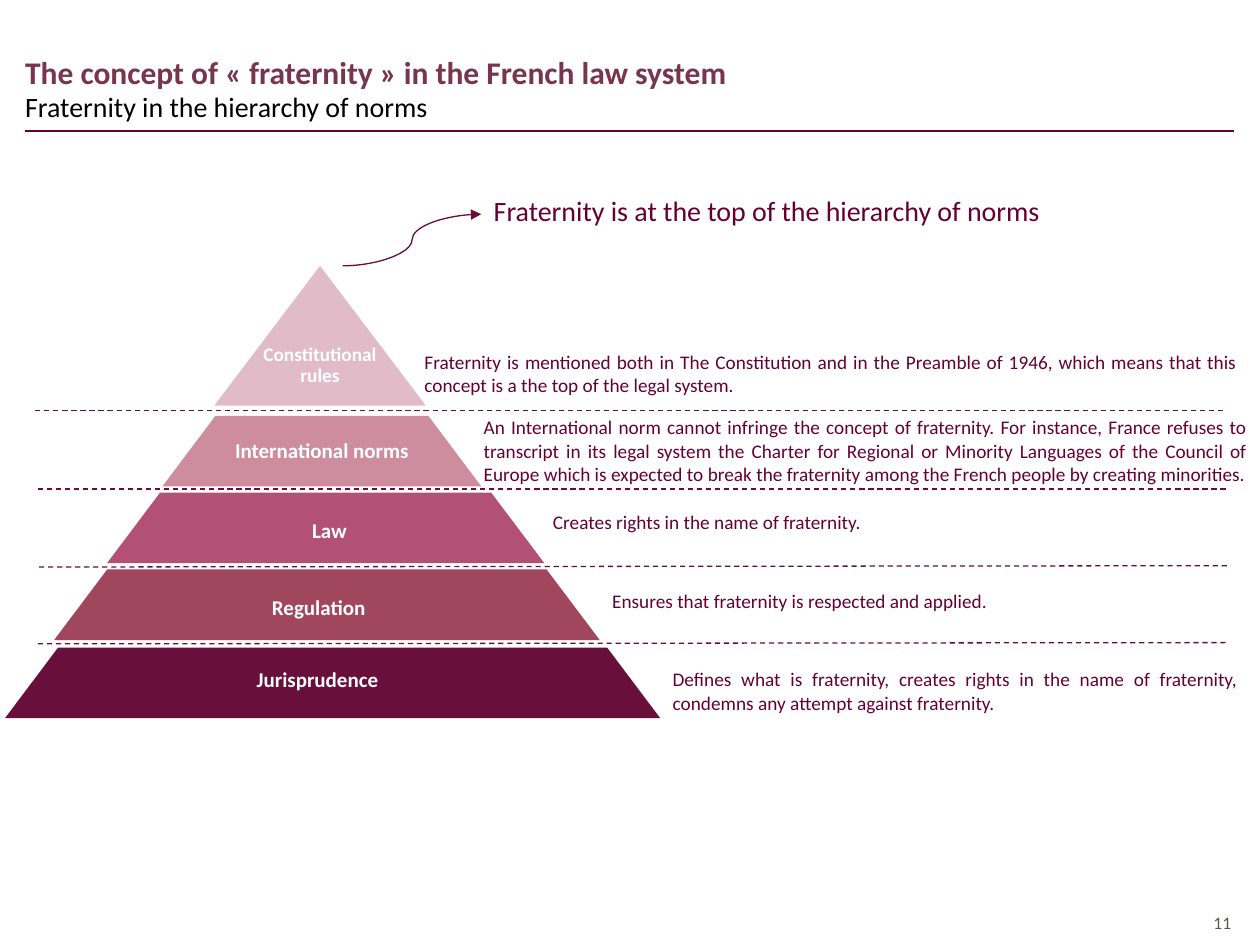
from lxml.etree import SubElement
from pptx import Presentation
from pptx.dml.color import RGBColor
from pptx.enum.dml import MSO_LINE
from pptx.enum.shapes import MSO_CONNECTOR as Connector, MSO_SHAPE as Shape
from pptx.enum.text import MSO_ANCHOR as Anchor, PP_ALIGN as Align
from pptx.oxml.ns import qn
from pptx.util import Inches, Pt

FONT = "Calibri"
WHITE = RGBColor(0xFF, 0xFF, 0xFF)
BLACK = RGBColor(0, 0, 0)
GREY = RGBColor(0x5C, 0x58, 0x51)
TITLE = RGBColor(0x78, 0x35, 0x4D)
PLUM = RGBColor(0x66, 0x00, 0x33)
LINE = RGBColor(0x69, 0x0C, 0x3B)
PINK = RGBColor(0xE1, 0xBB, 0xC8)
ROSE = RGBColor(0xCD, 0x8D, 0x9E)
MAUVE = RGBColor(0xB3, 0x51, 0x74)
BRICK = RGBColor(0xA0, 0x47, 0x5E)
WINE = RGBColor(0x69, 0x0F, 0x3C)

TIER_HEIGHT = 0.56
TIER_SLOPE = 0.752

# Tier box (left, top, width), colour, label, label box
TIERS = [
    ((1.29, 3.3, 2.53), ROSE, "International norms", (1.67, 3.42, 1.77, 0.3)),
    ((0.85, 3.91, 3.47), MAUVE, "Law", (1.7, 4.06, 1.83, 0.3)),
    ((0.43, 4.52, 4.33), BRICK, "Regulation", (1.66, 4.67, 1.74, 0.3)),
    ((0.04, 5.14, 5.2), WINE, "Jurisprudence", (1.65, 5.24, 1.74, 0.3)),
]

# Start and end of each dashed line
DIVIDERS = [
    (0.28, 3.26, 9.72, 3.26),
    (0.3, 3.88, 9.75, 3.88),
    (0.31, 4.5, 9.76, 4.49),
    (0.3, 5.11, 9.75, 5.1),
]

NOTES = [
    ((3.27, 2.73, 6.65, 0.47),
     "Fraternity is mentioned both in The Constitution and in the Preamble of "
     "1946, which means that this concept is a the top of the legal system."),
    ((3.74, 3.25, 6.26, 0.66),
     "An International norm cannot infringe the concept of fraternity. For "
     "instance, France refuses to transcript in its legal system the Charter for "
     "Regional or Minority Languages of the Council of Europe which is expected "
     "to break the fraternity among the French people by creating minorities."),
    ((4.29, 4, 6.18, 0.29), "Creates rights in the name of fraternity."),
    ((4.76, 4.63, 6.18, 0.29), "Ensures that fraternity is respected and applied."),
    ((5.24, 5.25, 4.68, 0.47),
     "Defines what is fraternity, creates rights in the name of fraternity, "
     "condemns any attempt against fraternity."),
]


def inches(box):
    return [Inches(length) for length in box]


def style(para, size, color, bold=False, align=Align.LEFT):
    para.alignment = align
    para.font.name = FONT
    para.font.size = Pt(size)
    para.font.color.rgb = color
    para.font.bold = bold


def add_text(page, box, text, size, color, bold=False, align=Align.LEFT, left=0.1, right=0.1):
    frame = page.shapes.add_textbox(*inches(box)).text_frame
    frame.word_wrap = True
    frame.margin_left, frame.margin_right = Inches(left), Inches(right)
    frame.text = text
    style(frame.paragraphs[0], size, color, bold, align)


def add_line(page, ends, color, width, kind=Connector.STRAIGHT):
    line = page.shapes.add_connector(kind, *inches(ends))
    line.line.color.rgb = color
    line.line.width = Pt(width)
    SubElement(line._element.spPr, qn("a:effectLst"))
    return line


def add_filled(page, kind, box, color):
    shape = page.shapes.add_shape(kind, *inches(box))
    shape.shadow.inherit = False
    shape.fill.solid()
    shape.fill.fore_color.rgb = color
    shape.line.fill.background()
    return shape


def add_header(page, left, top, width):
    add_text(page, (left, top, width, 0.32),
             "The concept of « fraternity » in the French law system",
             18, TITLE, bold=True, left=0)
    add_text(page, (left, top + 0.29, width, 0.36),
             "Fraternity in the hierarchy of norms", 16, BLACK, left=0)
    add_line(page, (left, top + 0.67, left + width - 0.01, top + 0.67), PLUM, 1)


def add_peak(page, box):
    frame = add_filled(page, Shape.ISOSCELES_TRIANGLE, box, PINK).text_frame
    frame.word_wrap = False
    frame.vertical_anchor = Anchor.TOP
    frame.margin_left = frame.margin_right = frame.margin_bottom = 0
    frame.margin_top = Inches(0.07)
    frame.text = "Constitutional\nrules"
    for para in frame.paragraphs:
        style(para, 11, WHITE, bold=True, align=Align.CENTER)
        para.line_spacing = 0.9


def add_pyramid(page):
    add_peak(page, (1.7, 2.11, 1.68, 1.11))
    for box, color, label, label_box in TIERS:
        tier = add_filled(page, Shape.TRAPEZOID, (*box, TIER_HEIGHT), color)
        tier.adjustments[0] = TIER_SLOPE
        add_text(page, label_box, label, 12, WHITE, bold=True, align=Align.CENTER)


def add_notes(page):
    for ends in DIVIDERS:
        add_line(page, ends, LINE, 0.75).line.dash_style = MSO_LINE.DASH
    for box, text in NOTES:
        add_text(page, box, text, 11, PLUM, align=Align.JUSTIFY)


def add_callout(page, box):
    """Headline with a curved arrow leading to it from the peak."""
    left, top = box[:2]
    arrow = add_line(page, (left - 1.1, top + 0.62, left, top + 0.21), LINE, 0.75,
                     Connector.CURVE)
    SubElement(arrow.line._get_or_add_ln(), qn("a:tailEnd"), type="triangle")
    add_text(page, box, "Fraternity is at the top of the hierarchy of norms", 16, PLUM)


def main():
    deck = Presentation()
    deck.slide_width, deck.slide_height = Inches(10), Inches(7.5)
    page = deck.slides.add_slide(deck.slide_layouts[6])
    add_header(page, 0.2, 0.37, 9.6)
    add_pyramid(page)
    add_notes(page)
    add_callout(page, (3.82, 1.49, 5.28, 0.37))
    add_text(page, (6.38, 7.19, 3.39, 0.27), "11", 10, GREY, align=Align.RIGHT, left=0, right=0)
    deck.save("out.pptx")


if __name__ == "__main__":
    main()
